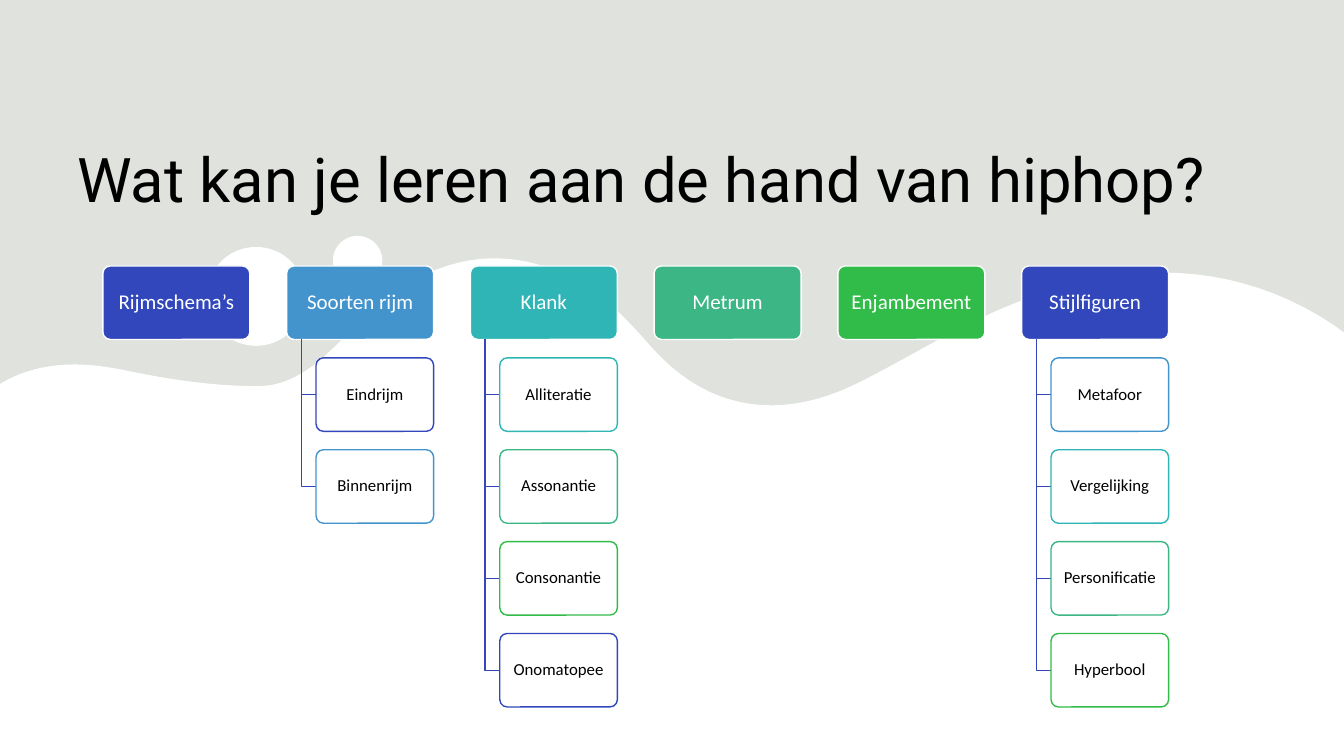
"""Builds a slide with the hiphop lesson topics as a hierarchy over a wavy backdrop."""
import itertools

import lxml.etree
import pptx
import pptx.dml.color
import pptx.enum.shapes
import pptx.enum.text
import pptx.oxml.ns
import pptx.util

Pt = pptx.util.Pt
SHAPES = pptx.enum.shapes.MSO_SHAPE
ANCHORS = pptx.enum.text.MSO_ANCHOR
ALIGNS = pptx.enum.text.PP_ALIGN

TITLE = "Wat kan je leren aan de hand van hiphop?"
TOPICS = [
    ("Rijmschema’s", []),
    ("Soorten rijm", ["Eindrijm", "Binnenrijm"]),
    ("Klank", ["Alliteratie", "Assonantie", "Consonantie", "Onomatopee"]),
    ("Metrum", []),
    ("Enjambement", []),
    ("Stijlfiguren", ["Metafoor", "Vergelijking", "Personificatie", "Hyperbool"]),
]
COLOURS = {
    "backdrop": "E0E2DD",
    "white": "FFFFFF",
    "black": "000000",
    "blue": "3147BB",
    "sky": "4393CD",
    "teal": "2FB5B6",
    "jade": "3BB684",
    "green": "31BB49",
}
ACCENTS = ["blue", "sky", "teal", "jade", "green"]

PAGE_WIDTH, PAGE_HEIGHT = 960, 540
BUBBLES = [(147.6, 176.4, 70.6), (237.8, 168.5, 35.3)]
WAVE_START = (5, 271.4)
WAVE_CURVES = [
    ((31.7, 257.8), (59, 258.5), (87.8, 264.2)),
    ((118.8, 270.7), (151.2, 275.8), (182.9, 275.8)),
    ((212.4, 276.5), (232.6, 254.2), (252, 234.7)),
    ((299.5, 185), (354.2, 170.6), (409, 198.7)),
    ((430.6, 209.5), (448.6, 229), (465.1, 247.7)),
    ((509, 297.4), (563, 298.8), (614.2, 272.9)),
    ((650.2, 254.9), (684.7, 232.6), (722.9, 217.4)),
    ((804.2, 184.3), (883.4, 185.8), (953.3, 232.6)),
]
WAVE_END = [(960, 237.6), (PAGE_WIDTH, PAGE_HEIGHT), (0, PAGE_HEIGHT), (0, 274.3)]
CURVE_STEPS = 20

TREE_LEFT, TREE_TOP = 73.5, 190
BOX_WIDTH, BOX_HEIGHT = 105, 52.5
COLUMN_PITCH, ROW_PITCH = BOX_WIDTH * 1.25, BOX_HEIGHT * 1.25
STEM_INDENT, CHILD_INDENT = BOX_WIDTH * 0.1, BOX_WIDTH * 0.2


def colour(name):
    """Return the named colour."""
    return pptx.dml.color.RGBColor.from_string(COLOURS[name])


def paint(shape, fill=None, line=None):
    """Set fill and outline and remove the shadow."""
    shape.shadow.inherit = False
    for part, name in ((shape.fill, fill), (shape.line.fill, line)):
        if name:
            part.solid()
            part.fore_color.rgb = colour(name)
        else:
            part.background()
    if line:
        shape.line.width = Pt(1)


def add_outline(page, points, close):
    """Draw a path through the given points."""
    corners = [(Pt(x), Pt(y)) for x, y in points]
    builder = page.shapes.build_freeform(*corners[0], scale=1.0)
    builder.add_line_segments(corners[1:], close=close)
    return builder.convert_to_shape()


def wave_points():
    """Trace the wave's cubic curves as points."""
    points = [WAVE_START]
    for first, second, end in WAVE_CURVES:
        start = points[-1]
        for step in range(1, CURVE_STEPS + 1):
            t = step / CURVE_STEPS
            weights = ((1 - t) ** 3, 3 * t * (1 - t) ** 2, 3 * t * t * (1 - t), t ** 3)
            knots = (start, first, second, end)
            points.append(tuple(sum(w * k[axis] for w, k in zip(weights, knots)) for axis in (0, 1)))
    return points + WAVE_END


def write(shape, text, size, font, ink, anchor, align):
    """Put one paragraph of text in a shape."""
    frame = shape.text_frame
    frame.word_wrap = True
    frame.vertical_anchor = anchor
    para = frame.paragraphs[0]
    para.text = text
    para.alignment = align
    para.line_spacing = 0.9
    para.font.size = Pt(size)
    para.font.name = font
    para.font.color.rgb = colour(ink)


def add_box(page, left, top, width, text, size, ink, fill, line):
    """Add one rounded box of the hierarchy."""
    box = page.shapes.add_shape(SHAPES.ROUNDED_RECTANGLE, Pt(left), Pt(top), Pt(width), Pt(BOX_HEIGHT))
    box.adjustments[0] = 0.1
    paint(box, fill, line)
    frame = box.text_frame
    frame.margin_left = frame.margin_right = Pt(2)
    frame.margin_top = frame.margin_bottom = Pt(1.5)
    write(box, text, size, "Calibri", ink, ANCHORS.MIDDLE, ALIGNS.CENTER)
    return box


def add_backdrop(page):
    """Fill the page and add the wave and its bubbles."""
    page.background.fill.solid()
    page.background.fill.fore_color.rgb = colour("backdrop")
    paint(add_outline(page, wave_points(), True), "white")
    for left, top, size in BUBBLES:
        paint(page.shapes.add_shape(SHAPES.OVAL, Pt(left), Pt(top), Pt(size), Pt(size)), "white")


def add_tree(page):
    """Add the topic boxes with their subtopics."""
    child_accents = itertools.cycle(ACCENTS)
    for column, (topic, accent) in enumerate(zip(TOPICS, itertools.cycle(ACCENTS))):
        name, children = topic
        left = TREE_LEFT + column * COLUMN_PITCH
        add_box(page, left, TREE_TOP, BOX_WIDTH, name, 15, "white", accent, "white")
        stem, child_left = left + STEM_INDENT, left + CHILD_INDENT
        for row, child in enumerate(children, 1):
            top = TREE_TOP + row * ROW_PITCH
            middle = top + BOX_HEIGHT / 2
            elbow = [(stem, TREE_TOP + BOX_HEIGHT), (stem, middle), (child_left, middle)]
            paint(add_outline(page, elbow, False), line="blue")
            box = add_box(page, child_left, top, BOX_WIDTH - CHILD_INDENT, child, 12, "black",
                          "white", next(child_accents))
            tint = box.element.spPr.find(pptx.oxml.ns.qn("a:solidFill"))[0]
            lxml.etree.SubElement(tint, pptx.oxml.ns.qn("a:alpha"), val="90000")


def main():
    """Build and save the deck."""
    deck = pptx.Presentation()
    deck.slide_width, deck.slide_height = Pt(PAGE_WIDTH), Pt(PAGE_HEIGHT)
    page = deck.slides.add_slide(deck.slide_layouts[6])
    add_backdrop(page)
    title = page.shapes.add_textbox(Pt(48), Pt(44), Pt(864), Pt(114))
    write(title, TITLE, 44, "Roboto", "black", ANCHORS.BOTTOM, ALIGNS.LEFT)
    add_tree(page)
    deck.save("out.pptx")


if __name__ == "__main__":
    main()
